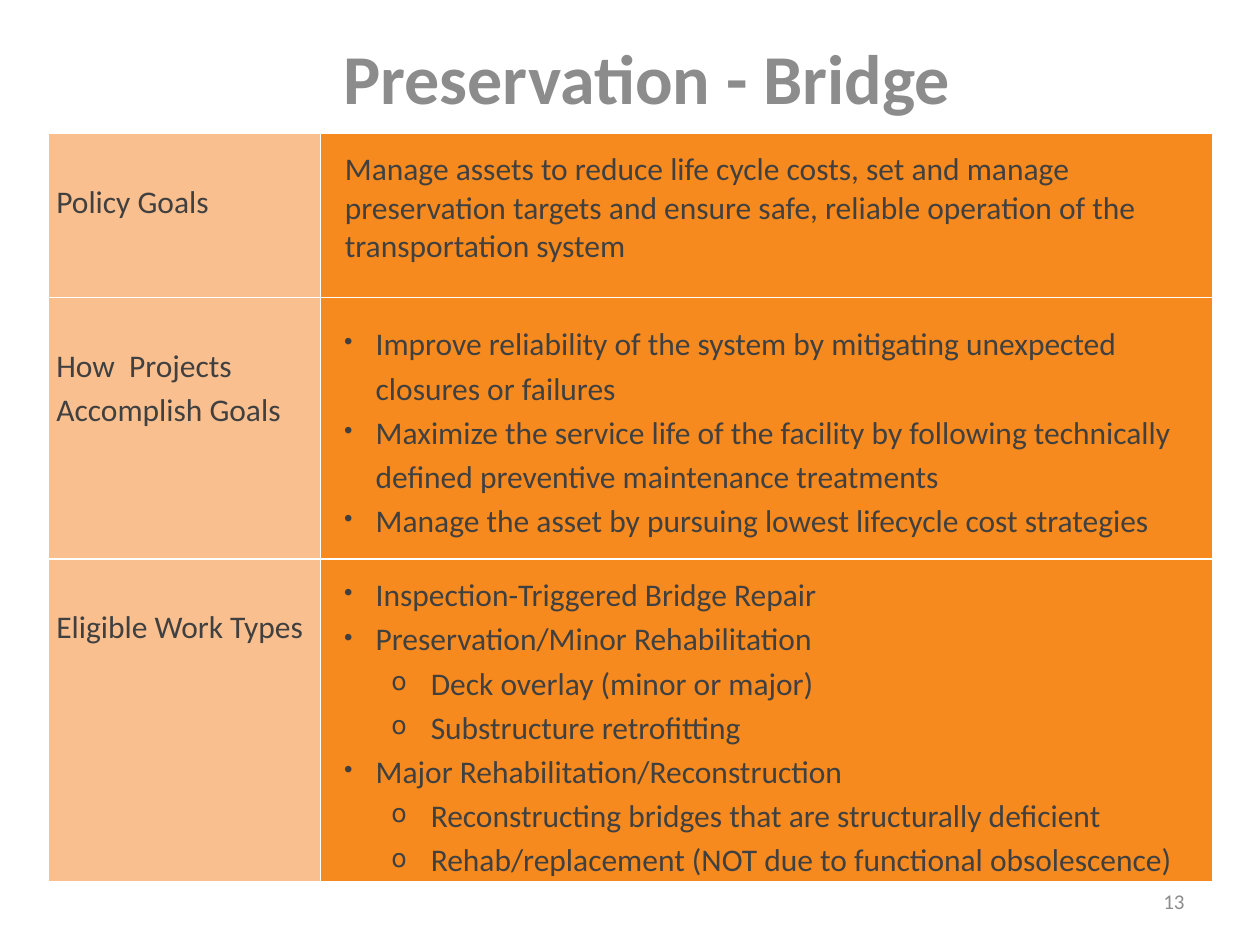
from dataclasses import dataclass

from lxml.etree import SubElement
from pptx import Presentation
from pptx.dml.color import RGBColor
from pptx.enum.text import MSO_ANCHOR as Anchor, PP_ALIGN as Align
from pptx.oxml.ns import qn
from pptx.util import Pt


@dataclass(frozen=True)
class Theme:
    """Colours and type sizes of the slide."""
    font: str = "Calibri"
    heading: str = "8C8C8C"
    body: str = "404040"
    label_fill: str = "FABF8F"
    detail_fill: str = "F78A1E"
    border: str = "FFFFFF"
    title_size: int = 40
    body_size: int = 18
    number_size: int = 12


@dataclass(frozen=True)
class Style:
    """Indents, line spacing and bullet of a paragraph."""
    left: float = 0
    hanging: float = 0
    spacing: float = 1.15
    bullet: str = ""
    level: int = 0


THEME = Theme()
LABEL = Style()
PLAIN = Style(left=9.4, spacing=1)
BULLET = Style(left=27, hanging=18, bullet="•")
SUB_BULLET = Style(left=58.5, hanging=22.5, bullet="o", level=1)

LABEL_TOP = 25.3
COLUMN_WIDTHS = (155.5, 509.8)
ROWS = [
    ("Policy Goals", 93.6, 9.8, [
        (PLAIN, "Manage assets to reduce life cycle costs, set and manage \vpreservation "
                "targets and ensure safe, reliable operation of the transportation system"),
    ]),
    ("How  Projects Accomplish Goals", 149.4, 13, [
        (BULLET, "Improve reliability of the system by mitigating unexpected \vclosures or failures"),
        (BULLET, "Maximize the service life of the facility by following technically "
                 "defined preventive maintenance treatments"),
        (BULLET, "Manage the asset by pursuing lowest lifecycle cost strategies"),
    ]),
    ("Eligible Work Types", 184.3, 7, [
        (BULLET, "Inspection-Triggered Bridge Repair"),
        (BULLET, "Preservation/Minor Rehabilitation"),
        (SUB_BULLET, "Deck overlay (minor or major)"),
        (SUB_BULLET, "Substructure retrofitting"),
        (BULLET, "Major Rehabilitation/Reconstruction"),
        (SUB_BULLET, "Reconstructing bridges that are structurally deficient"),
        (SUB_BULLET, "Rehab/replacement (NOT due to functional obsolescence)"),
    ]),
]


def format_runs(paragraph, size, color, bold=False):
    """Set the font of every run in a paragraph."""
    for run in paragraph.runs:
        run.font.name = THEME.font
        run.font.size = Pt(size)
        run.font.bold = bold
        run.font.color.rgb = RGBColor.from_string(color)


def write_paragraph(paragraph, text, style):
    """Write one table paragraph in the given style."""
    paragraph.text = text
    paragraph.level = style.level
    paragraph.line_spacing = style.spacing
    properties = paragraph._p.get_or_add_pPr()
    properties.set("marL", str(Pt(style.left)))
    properties.set("indent", str(-Pt(style.hanging)))
    if style.bullet:
        SubElement(properties, qn("a:buSzPct"), val="80000")
        SubElement(properties, qn("a:buChar"), char=style.bullet)
    format_runs(paragraph, THEME.body_size, THEME.body)


def add_borders(cell):
    """Draw a thin line on all four sides of a cell."""
    properties = cell._tc.get_or_add_tcPr()
    for index, side in enumerate(("lnL", "lnR", "lnT", "lnB")):
        line = properties.makeelement(qn(f"a:{side}"), {"w": str(Pt(1))})
        fill = SubElement(line, qn("a:solidFill"))
        SubElement(fill, qn("a:srgbClr"), val=THEME.border)
        properties.insert(index, line)


def fill_cell(cell, color, top, items):
    """Fill a cell with colour, borders and styled paragraphs."""
    cell.fill.solid()
    cell.fill.fore_color.rgb = RGBColor.from_string(color)
    add_borders(cell)
    cell.margin_left = cell.margin_right = Pt(4.5)
    cell.margin_top, cell.margin_bottom = Pt(top), Pt(0)
    text_frame = cell.text_frame
    for index, (style, text) in enumerate(items):
        paragraph = text_frame.add_paragraph() if index else text_frame.paragraphs[0]
        write_paragraph(paragraph, text, style)


def add_title(slide, left, top, width, height):
    """Place and format the title placeholder."""
    title = slide.shapes.title
    title.left, title.top, title.width, title.height = map(Pt, (left, top, width, height))
    text_frame = title.text_frame
    text_frame.text = "Preservation - Bridge"
    text_frame.vertical_anchor = Anchor.TOP
    paragraph = text_frame.paragraphs[0]
    paragraph.alignment = Align.CENTER
    format_runs(paragraph, THEME.title_size, THEME.heading, bold=True)


def add_goals_table(slide, left, top):
    """Add the table of labels and details."""
    height = sum(row[1] for row in ROWS)
    frame = slide.shapes.add_table(len(ROWS), len(COLUMN_WIDTHS), Pt(left), Pt(top),
                                   Pt(sum(COLUMN_WIDTHS)), Pt(height))
    table = frame.table
    table.first_row = table.horz_banding = False
    for column, width in zip(table.columns, COLUMN_WIDTHS):
        column.width = Pt(width)
    for row, (label, row_height, detail_top, details) in zip(table.rows, ROWS):
        row.height = Pt(row_height)
        label_cell, detail_cell = row.cells
        fill_cell(label_cell, THEME.label_fill, LABEL_TOP, [(LABEL, label)])
        fill_cell(detail_cell, THEME.detail_fill, detail_top, details)


def add_slide_number(slide, left, top, width, height):
    """Add the right-aligned slide number."""
    box = slide.shapes.add_textbox(Pt(left), Pt(top), Pt(width), Pt(height))
    text_frame = box.text_frame
    text_frame.word_wrap = True
    text_frame.vertical_anchor = Anchor.MIDDLE
    text_frame.text = "13"
    paragraph = text_frame.paragraphs[0]
    paragraph.alignment = Align.RIGHT
    format_runs(paragraph, THEME.number_size, THEME.heading)


def main():
    """Build and save the presentation."""
    presentation = Presentation()
    presentation.slide_width, presentation.slide_height = Pt(720), Pt(540)
    slide = presentation.slides.add_slide(presentation.slide_layouts[5])
    add_title(slide, 143, 16, 453, 124)
    add_goals_table(slide, 27.7, 76.3)
    add_slide_number(slide, 516, 500.5, 168, 28.8)
    presentation.save("out.pptx")


if __name__ == "__main__":
    main()
